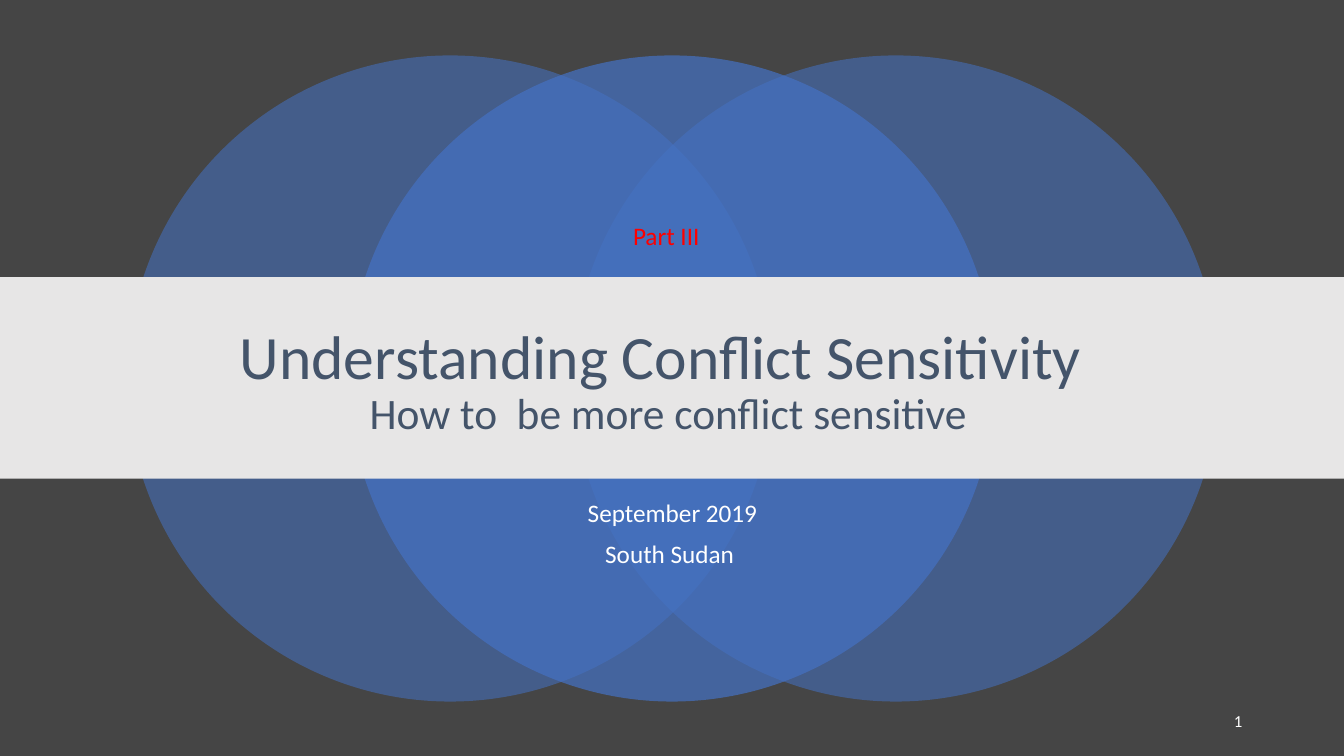
import pptx
import pptx.util
import pptx.dml.color
import pptx.enum.shapes
import pptx.enum.text
from lxml import etree

Inches = pptx.util.Inches
Pt = pptx.util.Pt
RGBColor = pptx.dml.color.RGBColor
SHAPE = pptx.enum.shapes.MSO_SHAPE
ALIGN = pptx.enum.text.PP_ALIGN
ANCHOR = pptx.enum.text.MSO_ANCHOR

DARK = RGBColor(0x45, 0x45, 0x45)
BLUE = RGBColor(0x44, 0x72, 0xC4)
PALE = RGBColor(0xE7, 0xE6, 0xE6)
SLATE = RGBColor(0x44, 0x54, 0x6A)
WHITE = RGBColor(0xFF, 0xFF, 0xFF)
RED = RGBColor(0xFF, 0x00, 0x00)

deck = pptx.Presentation()
deck.slide_width = Inches(13.33)
deck.slide_height = Inches(7.5)
slide = deck.slides.add_slide(deck.slide_layouts[6])
slide.background.fill.solid()
slide.background.fill.fore_color.rgb = DARK


def add_plain(parent, kind, box, color):
    """Add a preset shape with a flat fill, no line and no shadow."""
    shape = parent.add_shape(kind, *map(Inches, box))
    shape.shadow.inherit = False
    shape.fill.solid()
    shape.fill.fore_color.rgb = color
    shape.line.fill.background()
    return shape


def add_text(box, lines, color, align, anchor=ANCHOR.TOP):
    """Add a text box; each line is a list of (text, size) runs split by breaks."""
    frame = slide.shapes.add_textbox(*map(Inches, box)).text_frame
    frame.word_wrap = True
    frame.vertical_anchor = anchor
    for i, runs in enumerate(lines):
        para = frame.add_paragraph() if i else frame.paragraphs[0]
        para.alignment = align
        for j, (text, size) in enumerate(runs):
            if j:
                para.add_line_break()
            run = para.add_run()
            run.text = text
            run.font.name = "Calibri"
            run.font.size = Pt(size)
            run.font.color.rgb = color
    return frame


# Overlapping circles, the middle one in front
rings = slide.shapes.add_group_shape()
for left, alpha in [(1.26, 55), (5.68, 55), (3.46, 70)]:
    ring = add_plain(rings.shapes, SHAPE.OVAL, (left, 0.55, 6.41, 6.41), BLUE)
    tint = ring.fill._xPr.find(".//" + pptx.oxml.ns.qn("a:srgbClr"))
    etree.SubElement(tint, pptx.oxml.ns.qn("a:alpha"), val=str(alpha * 1000))

# Date and place
dates = add_text((1.67, 4.92, 10, 0.83),
                 [[("September 2019", 18)], [("South Sudan ", 18)]],
                 WHITE, ALIGN.CENTER)
for para in dates.paragraphs:
    para.line_spacing = 0.9
    para.space_before = Pt(10)

# Title on its band
add_plain(slide.shapes, SHAPE.RECTANGLE, (0, 2.75, 13.33, 2), PALE)
title = add_text((1.16, 3.04, 10.93, 1.51),
                 [[("Understanding Conflict Sensitivity ", 44),
                   ("How to  be more conflict sensitive", 31)]],
                 SLATE, ALIGN.CENTER, ANCHOR.MIDDLE)
title.paragraphs[0].line_spacing = 0.9

# Slide number and part label
number = add_text((9.42, 6.95, 3, 0.4), [[("1", 12)]], WHITE, ALIGN.RIGHT,
                  ANCHOR.MIDDLE)
number.paragraphs[0].space_after = Pt(6)
add_text((6.18, 2.14, 3.69, 0.4), [[("Part III", 18)]], RED, ALIGN.LEFT)

deck.save("out.pptx")
